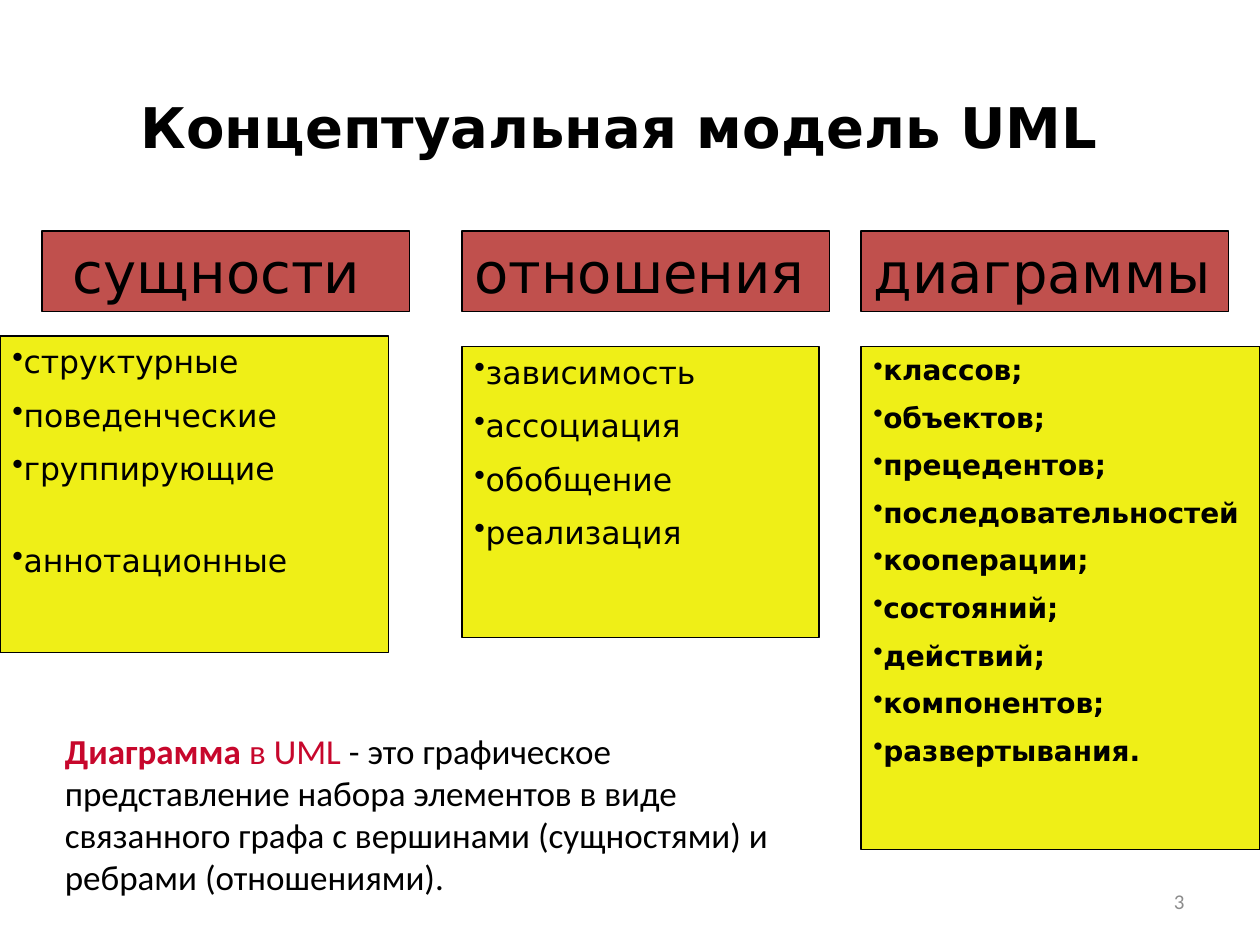
from dataclasses import dataclass

import pptx
import pptx.dml.color
import pptx.enum.shapes
import pptx.enum.text
import pptx.oxml.ns
import pptx.util
from lxml import etree

Pt = pptx.util.Pt
RGB = pptx.dml.color.RGBColor.from_string
ALIGN = pptx.enum.text.PP_ALIGN
MIDDLE = pptx.enum.text.MSO_ANCHOR.MIDDLE


@dataclass(frozen=True)
class Theme:
    heading_font: str = "DejaVu Sans"
    text_font: str = "Calibri"
    ink: str = "000000"
    heading_fill: str = "C0504D"
    list_fill: str = "EFEF17"
    accent: str = "C7072C"
    muted: str = "8C8C8C"
    title_size: int = 32
    list_size: int = 18
    dense_list_size: int = 16
    definition_size: int = 20
    number_size: int = 12


THEME = Theme()

# heading, its alignment, left edge, list (top, width, height), size, bold, items
COLUMNS = [
    ("сущности ", ALIGN.CENTER, 24, (0, 192, 222, 181), THEME.list_size, False,
     ["структурные", "поведенческие", "группирующие", "аннотационные"]),
    ("отношения", ALIGN.LEFT, 264, (264, 198, 204, 166.5), THEME.list_size, False,
     ["зависимость", "ассоциация", "обобщение", "реализация"]),
    ("диаграммы", ALIGN.LEFT, 492, (492, 198, 228, 287.5), THEME.dense_list_size, True,
     ["классов;", "объектов;", "прецедентов;", "последовательностей", "кооперации;",
      "состояний;", "действий;", "компонентов;", "развертывания."]),
]
DEFINITION = [
    ("Диаграмма ", THEME.accent, True),
    ("в UML", THEME.accent, False),
    (" - это графическое представление набора элементов в виде связанного графа "
     "с вершинами (сущностями) и ребрами (отношениями).", THEME.ink, False),
]


def style_run(run, size, color=THEME.ink, font=THEME.heading_font, bold=False):
    run.font.name = font
    run.font.size = Pt(size)
    run.font.bold = bold
    run.font.color.rgb = RGB(color)


def space_by_half(paragraph):
    """Set the space before to 50 % of the line, which the API cannot express."""
    properties = paragraph._p.get_or_add_pPr()
    spacing = etree.SubElement(properties, pptx.oxml.ns.qn("a:spcBef"))
    etree.SubElement(spacing, pptx.oxml.ns.qn("a:spcPct"), val="50000")


def add_bullet(paragraph):
    properties = paragraph._p.get_or_add_pPr()
    etree.SubElement(properties, pptx.oxml.ns.qn("a:buChar"), char="•")


def add_panel(slide, box, fill):
    panel = slide.shapes.add_shape(
        pptx.enum.shapes.MSO_SHAPE.RECTANGLE, *map(Pt, box))
    panel.shadow.inherit = False
    panel.fill.solid()
    panel.fill.fore_color.rgb = RGB(fill)
    panel.line.color.rgb = RGB(THEME.ink)
    panel.line.width = Pt(0.75)
    frame = panel.text_frame
    frame.word_wrap = True
    frame.vertical_anchor = pptx.enum.text.MSO_ANCHOR.TOP
    frame.auto_size = pptx.enum.text.MSO_AUTO_SIZE.SHAPE_TO_FIT_TEXT
    return frame


def add_heading(slide, text, align, left):
    frame = add_panel(slide, (left, 132, 210, 46), THEME.heading_fill)
    frame.text = text
    heading = frame.paragraphs[0]
    heading.alignment = align
    space_by_half(heading)
    style_run(heading.runs[0], THEME.title_size)


def add_list(slide, box, size, bold, items):
    frame = add_panel(slide, box, THEME.list_fill)
    frame.text = "\n".join(items)
    for item in frame.paragraphs:
        item.alignment = ALIGN.LEFT
        space_by_half(item)
        add_bullet(item)
        style_run(item.runs[0], size, bold=bold)
    return frame


def add_text(slide, box):
    frame = slide.shapes.add_textbox(*map(Pt, box)).text_frame
    frame.word_wrap = True
    return frame


def add_title(slide, text):
    title = slide.shapes.title
    title.left, title.top, title.width, title.height = map(Pt, (48, 42, 612, 60.5))
    title.text_frame.text = text
    title.text_frame.vertical_anchor = MIDDLE
    heading = title.text_frame.paragraphs[0]
    heading.alignment = ALIGN.CENTER
    style_run(heading.runs[0], THEME.title_size, bold=True)


def add_definition(slide):
    definition = add_text(slide, (30, 413.5, 426, 103)).paragraphs[0]
    space_by_half(definition)
    for text, color, bold in DEFINITION:
        run = definition.add_run()
        run.text = text
        style_run(run, THEME.definition_size, color, THEME.text_font, bold)


def add_page_number(slide, number):
    frame = add_text(slide, (516, 500.5, 168, 29))
    frame.vertical_anchor = MIDDLE
    frame.text = number
    frame.paragraphs[0].alignment = ALIGN.RIGHT
    style_run(frame.paragraphs[0].runs[0], THEME.number_size, THEME.muted, THEME.text_font)


def main():
    deck = pptx.Presentation()
    deck.slide_width, deck.slide_height = Pt(720), Pt(540)
    slide = deck.slides.add_slide(deck.slide_layouts.get_by_name("Title Only"))

    add_title(slide, "Концептуальная модель UML")
    lists = []
    for heading, align, left, box, size, bold, items in COLUMNS:
        add_heading(slide, heading, align, left)
        lists.append(add_list(slide, box, size, bold, items))
    lists[0].paragraphs[-1].space_before = Pt(31)  # the last kind stands apart
    add_definition(slide)
    add_page_number(slide, "3")

    deck.save("out.pptx")


if __name__ == "__main__":
    main()
